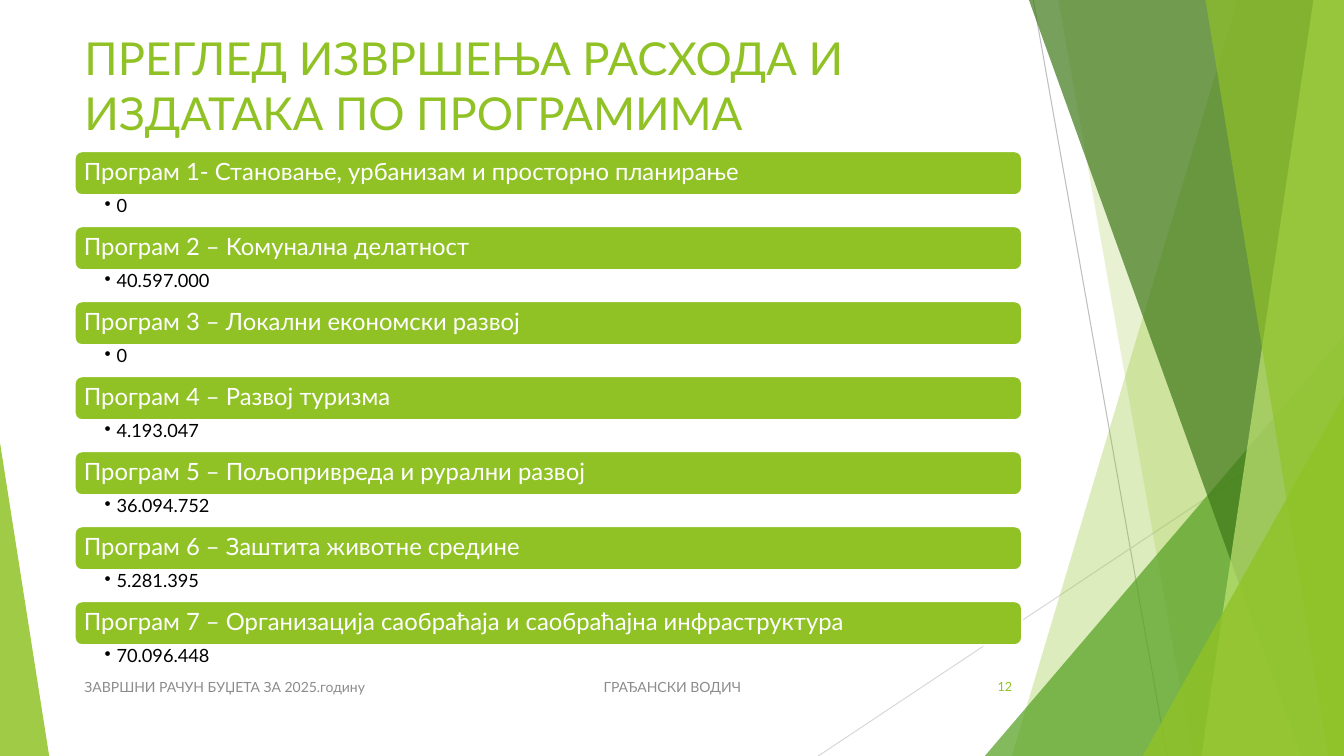
import pptx
import pptx.dml.color
import pptx.enum.shapes
import pptx.enum.text
import pptx.oxml
import pptx.oxml.ns
import pptx.util
from pptx.dml.color import RGBColor
from pptx.enum.shapes import MSO_SHAPE
from pptx.enum.text import MSO_ANCHOR, PP_ALIGN
from pptx.util import Cm

SLIDE_WIDTH, SLIDE_HEIGHT = 33.87, 19.05
FONT = "Lato"

GREEN = RGBColor(0x90, 0xC2, 0x26)
MID_GREEN = RGBColor(0x54, 0xA0, 0x21)
DARK_GREEN = RGBColor(0x3F, 0x78, 0x19)
LIGHT_GREEN = RGBColor(0xC0, 0xE4, 0x74)
WHITE = RGBColor(0xFF, 0xFF, 0xFF)
BLACK = RGBColor(0, 0, 0)
FOOTER_GREY = RGBColor(0x8C, 0x8C, 0x8C)
LINE_GREY = RGBColor(0xBF, 0xBF, 0xBF)
PALE_GREY = RGBColor(0xD9, 0xD9, 0xD9)

CONTENT_LEFT, CONTENT_WIDTH = 1.88, 23.88
FIRST_BAR_TOP, PROGRAM_PITCH = 3.81, 1.89
BAR_HEIGHT, AMOUNT_HEIGHT = 1.11, 0.78

PROGRAMS = [
    ("Програм 1- Становање, урбанизам и просторно планирање", "0"),
    ("Програм 2 – Комунална делатност", "40.597.000"),
    ("Програм 3 – Локални економски развој", "0"),
    ("Програм 4 – Развој туризма", "4.193.047"),
    ("Програм 5 – Пољопривреда и рурални развој", "36.094.752"),
    ("Програм 6 – Заштита животне средине", "5.281.395"),
    ("Програм 7 – Организација саобраћаја и саобраћајна инфраструктура", "70.096.448"),
]


def add_property(paragraph, xml):
    """Append a bullet or tab element, given as XML, to the paragraph properties."""
    namespace = pptx.oxml.ns.nsdecls("a")
    element = pptx.oxml.parse_xml(xml.replace(">", f" {namespace}>", 1))
    paragraph._p.get_or_add_pPr().append(element)


def write_text(shape, text, size, color, align=PP_ALIGN.LEFT, anchor=MSO_ANCHOR.TOP,
               margins=(0.25, 0.13, 0.25, 0.13), line_spacing=None, bullet_indent=None,
               tab_stop=None):
    """Fill a shape with one paragraph; margins are left, top, right, bottom in cm."""
    frame = shape.text_frame
    frame.word_wrap = True
    frame.vertical_anchor = anchor
    (frame.margin_left, frame.margin_top,
     frame.margin_right, frame.margin_bottom) = map(Cm, margins)
    paragraph = frame.paragraphs[0]
    paragraph.alignment = align
    paragraph.line_spacing = line_spacing
    if bullet_indent:
        properties = paragraph._p.get_or_add_pPr()
        properties.set("marL", str(Cm(bullet_indent)))
        properties.set("indent", str(-Cm(bullet_indent)))
        add_property(paragraph, '<a:buChar char="•"></a:buChar>')
    if tab_stop:
        add_property(paragraph,
                     f'<a:tabLst><a:tab pos="{Cm(tab_stop)}" algn="l"/></a:tabLst>')
    run = paragraph.add_run()
    run.text = text
    run.font.name = FONT
    run.font.size = pptx.util.Pt(size)
    run.font.color.rgb = color


def add_text(slide, left, top, width, height, text, **text_format):
    box = slide.shapes.add_textbox(Cm(left), Cm(top), Cm(width), Cm(height))
    write_text(box, text, **text_format)


def paint(shape, color, opacity):
    """Give a shape a translucent fill (opacity in percent) and no outline."""
    shape.shadow.inherit = False
    shape.line.fill.background()
    shape.fill.solid()
    shape.fill.fore_color.rgb = color
    color_element = shape.fill._xPr.find(".//" + pptx.oxml.ns.qn("a:srgbClr"))
    alpha = pptx.oxml.parse_xml(
        f'<a:alpha {pptx.oxml.ns.nsdecls("a")} val="{opacity * 1000}"/>')
    color_element.append(alpha)


def add_pane(slide, top_x, bottom_x, color, opacity):
    """Full-height pane from a slanted left edge to the right edge of the slide."""
    builder = slide.shapes.build_freeform(Cm(top_x), 0)
    corners = [(SLIDE_WIDTH, 0), (SLIDE_WIDTH, SLIDE_HEIGHT), (bottom_x, SLIDE_HEIGHT)]
    builder.add_line_segments([(Cm(x), Cm(y)) for x, y in corners], close=True)
    paint(builder.convert_to_shape(), color, opacity)


def add_corner_triangle(slide, left, top, width, apex, color, opacity):
    """Triangle standing on the bottom edge; apex 0 is left and 1 is right."""
    triangle = slide.shapes.add_shape(MSO_SHAPE.ISOSCELES_TRIANGLE, Cm(left), Cm(top),
                                      Cm(width), Cm(SLIDE_HEIGHT - top))
    triangle.adjustments[0] = apex
    paint(triangle, color, opacity)


def add_line(slide, start, end, color):
    line = slide.shapes.add_connector(pptx.enum.shapes.MSO_CONNECTOR.STRAIGHT,
                                      *map(Cm, start + end))
    line.line.color.rgb = color
    line.line.width = pptx.util.Pt(0.75)
    namespace = pptx.oxml.ns.nsdecls("a")
    line._element.spPr.append(pptx.oxml.parse_xml(f"<a:effectLst {namespace}/>"))


def add_background(slide):
    add_line(slide, (26.04, 0), (29.41, SLIDE_HEIGHT), LINE_GREY)
    add_line(slide, (SLIDE_WIDTH, 10.24), (20.62, SLIDE_HEIGHT), PALE_GREY)
    add_pane(slide, 31.19, 25.5, GREEN, 30)
    add_pane(slide, 26.67, 30.05, GREEN, 20)
    add_corner_triangle(slide, 24.82, 8.46, SLIDE_WIDTH - 24.82, 1, MID_GREEN, 72)
    add_pane(slide, 25.93, 32.79, DARK_GREEN, 70)
    add_pane(slide, 33.1, 30.28, LIGHT_GREEN, 70)
    add_pane(slide, 30.38, 33.48, GREEN, 65)
    add_corner_triangle(slide, 28.8, 9.98, SLIDE_WIDTH - 28.8, 1, GREEN, 80)
    add_corner_triangle(slide, 0, 11.15, 1.24, 0, GREEN, 85)


def add_program(slide, top, name, amount):
    bar = slide.shapes.add_shape(MSO_SHAPE.ROUNDED_RECTANGLE, Cm(CONTENT_LEFT), Cm(top),
                                 Cm(CONTENT_WIDTH), Cm(BAR_HEIGHT))
    bar.shadow.inherit = False
    bar.fill.solid()
    bar.fill.fore_color.rgb = GREEN
    bar.line.color.rgb = WHITE
    bar.line.width = pptx.util.Pt(1.5)
    write_text(bar, name, size=17, color=WHITE, anchor=MSO_ANCHOR.MIDDLE,
               margins=(0.18, 0.18, 0.18, 0.18), line_spacing=0.9)
    add_text(slide, CONTENT_LEFT, top + BAR_HEIGHT, CONTENT_WIDTH, AMOUNT_HEIGHT, amount,
             size=13, color=BLACK, margins=(0.76, 0.05, 0.33, 0.05), line_spacing=0.9,
             bullet_indent=0.3)


def main():
    presentation = pptx.Presentation()
    presentation.slide_width = Cm(SLIDE_WIDTH)
    presentation.slide_height = Cm(SLIDE_HEIGHT)
    slide = presentation.slides.add_slide(presentation.slide_layouts[6])

    add_background(slide)
    add_text(slide, CONTENT_LEFT, 0.64, CONTENT_WIDTH, 3.28,
             "ПРЕГЛЕД ИЗВРШЕЊА РАСХОДА И ИЗДАТАКА ПО ПРОГРАМИМА", size=32.4, color=GREEN)
    add_text(slide, 23.85, 16.79, 1.91, 1.02, "12", size=9, color=GREEN,
             align=PP_ALIGN.RIGHT, anchor=MSO_ANCHOR.MIDDLE)
    add_text(slide, CONTENT_LEFT, 16.79, 17.5, 1.02,
             "ЗАВРШНИ РАЧУН БУЏЕТА ЗА 2025.годину\tГРАЂАНСКИ ВОДИЧ", size=10,
             color=FOOTER_GREY, anchor=MSO_ANCHOR.MIDDLE, tab_stop=13.08)
    for index, (name, amount) in enumerate(PROGRAMS):
        add_program(slide, FIRST_BAR_TOP + index * PROGRAM_PITCH, name, amount)

    presentation.save("out.pptx")


if __name__ == "__main__":
    main()
